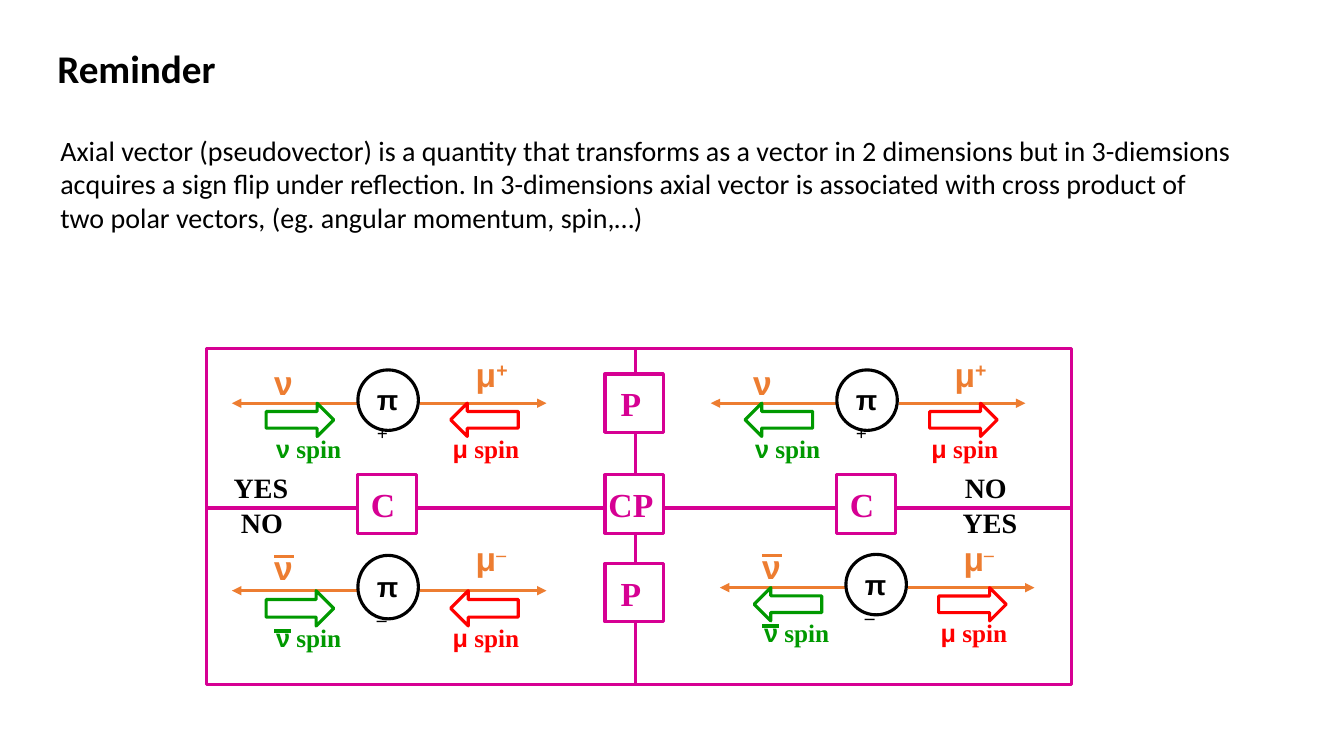
"""Build the reminder slide on axial vectors and pion decay under C, P and CP."""
from dataclasses import dataclass

from lxml.etree import SubElement
from pptx import Presentation
from pptx.dml.color import RGBColor
from pptx.enum.shapes import MSO_CONNECTOR as CONN, MSO_SHAPE as SHAPE
from pptx.enum.text import MSO_ANCHOR as ANCHOR, MSO_AUTO_SIZE as AUTO, PP_ALIGN as ALIGN
from pptx.oxml.ns import qn
from pptx.util import Emu, Pt


@dataclass(frozen=True)
class Theme:
    black: str = "000000"
    white: str = "FFFFFF"
    frame: str = "D60093"
    track: str = "ED7D31"
    neutrino: str = "009900"
    muon: str = "FF0000"
    sans: str = "Arial"
    serif: str = "Times New Roman"
    body: str = "Calibri"
    title_size: int = 28
    symbol_size: int = 24
    text_size: int = 20
    spin_size: int = 18
    line_width: float = 2.25


T = Theme()
PX = 9144

prs = Presentation()
prs.slide_width, prs.slide_height = Emu(1333 * PX), Emu(750 * PX)
s = prs.slides.add_slide(prs.slide_layouts[6])


def add_outline(kind, x, y, w, h, color):
    sp = s.shapes.add_shape(kind, x * PX, y * PX, w * PX, h * PX)
    sp.shadow.inherit = False
    sp.fill.solid()
    sp.fill.fore_color.rgb = RGBColor.from_string(T.white)
    sp.line.color.rgb = RGBColor.from_string(color)
    sp.line.width = Pt(T.line_width)
    return sp


def write(tf, paragraphs, color, bold=True):
    for i, runs in enumerate(paragraphs):
        p = tf.paragraphs[0] if i == 0 else tf.add_paragraph()
        for text, font, size, raised in runs:
            r = p.add_run()
            r.text = text
            r.font.name, r.font.size, r.font.bold = font, Pt(size), bold
            r.font.color.rgb = RGBColor.from_string(color)
            if raised:
                r._r.get_or_add_rPr().set("baseline", "30000")


# x and y of the neutrino end, stretch, charge, nu spin right, antineutrino
decays = [
    (705, 400, 1, "+", False, False),
    (230, 400, 1, "+", True, False),
    (230, 586, 1.05, "–", True, True),
    (714, 583, 1, "–", False, True),
]

add_outline(SHAPE.RECTANGLE, 205, 346, 858, 333, T.frame)

lines = [
    (205, 504, 1064, 504, T.frame, False),
    (630, 346, 630, 679, T.frame, False),
]
for x, y, k, charge, nu_right, anti in decays:
    lines += [
        (x + 125, y, x, y, T.track, True),
        (x + 187, y, x + 312, y, T.track, True),
    ]

for x1, y1, x2, y2, color, arrow in lines:
    c = s.shapes.add_connector(CONN.STRAIGHT, x1 * PX, y1 * PX, x2 * PX, y2 * PX)
    c.line.color.rgb = RGBColor.from_string(color)
    c.line.width = Pt(T.line_width)
    if arrow:
        SubElement(c.line._get_or_add_ln(), qn("a:tailEnd"), type="triangle")
    SubElement(c._element.spPr, qn("a:effectLst"))

labels = []
bars = []
for x, y, k, charge, nu_right, anti in decays:
    add_outline(SHAPE.OVAL, x + 125, y - round(33 * k), 60, round(60 * k), T.black)
    for dx, color, right in ((34, T.neutrino, nu_right), (217, T.muon, not nu_right)):
        sp = add_outline(SHAPE.LEFT_ARROW, x + dx, y, 67, round(33 * k), color)
        sp.rotation = 180 if right else 0
    charge_font = T.sans if charge == "+" else T.serif
    labels += [
        (x + 134, y - round(25 * k), 46, 44, True, T.black,
         [("π", T.sans, T.text_size, False), (charge, T.serif, T.symbol_size, True)]),
        (x + 32, y - round(46 * k), 38, 51, False, T.track,
         [("ν", T.sans, T.symbol_size, False)]),
        (x + 232, y - round(54 * k), 54, 51, False, T.track,
         [("μ", T.sans, T.symbol_size, False), (charge, charge_font, T.symbol_size, True)]),
    ]
    for dx, w, symbol, color in ((34, 86, "ν", T.neutrino), (209, 88, "μ", T.muon)):
        labels.append((x + dx, y + round(25 * k), w, 40, False, color,
                       [(symbol, T.sans, T.spin_size, False),
                        (" spin", T.serif, T.spin_size, False)]))
    if anti:
        bars += [(x + 42, y - round(32 * k), 20, T.track),
                 (x + 42, y + round(38 * k), 17, T.neutrino)]

for x, y, w, color in bars:
    c = s.shapes.add_connector(CONN.STRAIGHT, x * PX, y * PX, (x + w) * PX, y * PX)
    c.line.color.rgb = RGBColor.from_string(color)
    c.line.width = Pt(T.line_width)
    SubElement(c._element.spPr, qn("a:effectLst"))

for x, y, name in ((600, 371, "P "), (600, 471, "CP "), (600, 559, "P "),
                   (355, 471, "C "), (830, 471, "C ")):
    tf = add_outline(SHAPE.RECTANGLE, x, y, 58, 58, T.frame).text_frame
    tf.word_wrap = False
    tf.vertical_anchor = ANCHOR.MIDDLE
    write(tf, [[(name, T.serif, T.symbol_size, False)]], T.frame)
    tf.paragraphs[0].alignment = ALIGN.CENTER

for x, y, w, answer in ((222, 462, 74, "YES"), (947, 462, 62, "NO"),
                        (229, 497, 62, "NO"), (945, 497, 74, "YES")):
    labels.append((x, y, w, 43, False, T.black, [(answer, T.serif, T.text_size, False)]))
labels.append((47, 39, 179, 57, False, T.black,
               [("Reminder", T.body, T.title_size, False)]))

for x, y, w, h, wrap, color, runs in labels:
    tf = s.shapes.add_textbox(x * PX, y * PX, w * PX, h * PX).text_frame
    tf.word_wrap = wrap
    tf.auto_size = AUTO.SHAPE_TO_FIT_TEXT
    write(tf, [runs], color)

definition = [
    "Axial vector (pseudovector) is a quantity that transforms as a vector in 2 dimensions but in 3-diemsions",
    "acquires a sign flip under reflection. In 3-dimensions axial vector is associated with cross product of",
    "two polar vectors, (eg. angular momentum, spin,…)",
]
tf = s.shapes.add_textbox(50 * PX, 127 * PX, 1186 * PX, 111 * PX).text_frame
tf.word_wrap = False
tf.auto_size = AUTO.SHAPE_TO_FIT_TEXT
write(tf, [[(row, T.body, T.text_size, False)] for row in definition], T.black, bold=False)

prs.save("out.pptx")
